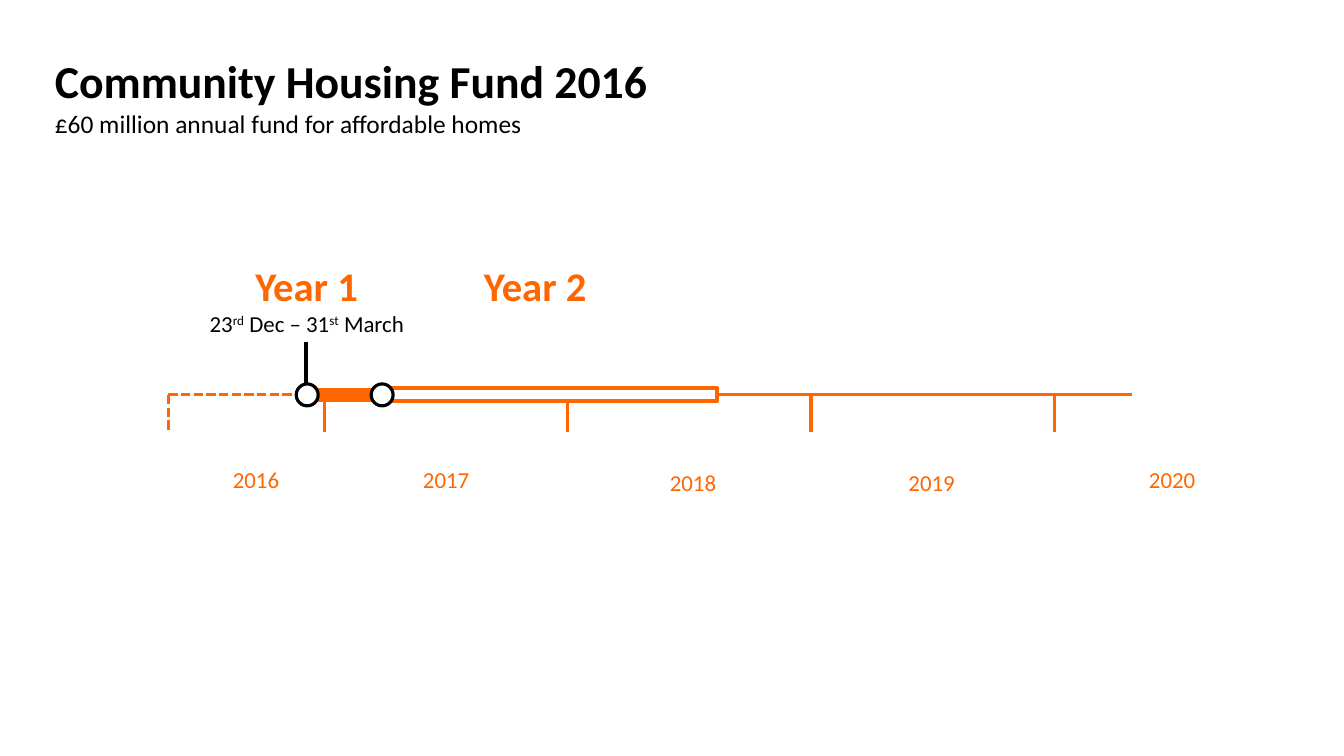
from dataclasses import dataclass

from lxml import etree
from pptx import Presentation
from pptx.dml.color import RGBColor
from pptx.enum.dml import MSO_LINE
from pptx.enum.shapes import MSO_CONNECTOR, MSO_SHAPE
from pptx.enum.text import MSO_ANCHOR, MSO_AUTO_SIZE, PP_ALIGN
from pptx.oxml.ns import qn
from pptx.slide import Slide
from pptx.text.text import TextFrame
from pptx.util import Inches, Pt

LEFT, CENTER = PP_ALIGN.LEFT, PP_ALIGN.CENTER
TOP = MSO_ANCHOR.TOP
FIXED_SIZE = MSO_AUTO_SIZE.NONE
DASHED = MSO_LINE.SQUARE_DOT
STRAIGHT = MSO_CONNECTOR.STRAIGHT
RECTANGLE, OVAL = MSO_SHAPE.RECTANGLE, MSO_SHAPE.OVAL
TITLE_ONLY = 5


@dataclass(frozen=True)
class Theme:
    font: str = "Calibri"
    orange: str = "FF6600"
    black: str = "000000"
    white: str = "FFFFFF"
    title_size: int = 36
    year_size: int = 32
    subtitle_size: int = 20
    label_size: int = 18


THEME = Theme()


@dataclass(frozen=True)
class Rule:
    x1: float
    y1: float
    x2: float
    y2: float
    color: str = THEME.orange
    weight: float = 2.5
    dashed: bool = False


@dataclass(frozen=True)
class Mark:
    kind: MSO_SHAPE
    left: float
    top: float
    width: float
    height: float
    fill: str
    line: str
    weight: float


@dataclass(frozen=True)
class CalendarYear:
    text: str
    left: float
    top: float


@dataclass(frozen=True)
class FundYear:
    name: str
    left: float
    height: float
    dates: str = ""


# Timeline geometry
AXIS_Y = 4.32
TICK_END = 4.73
FIRST_TICK, TICK_STEP, TICK_COUNT = 3.55, 2.66, 4
START_X = 1.84
MARKER_SIZE = 0.24

AXIS_RULES = [
    Rule(3.47, AXIS_Y, 12.38, AXIS_Y),
    *(Rule(FIRST_TICK + TICK_STEP * i, AXIS_Y, FIRST_TICK + TICK_STEP * i, TICK_END)
      for i in range(TICK_COUNT)),
    Rule(START_X, AXIS_Y, START_X, TICK_END, dashed=True),
    Rule(START_X, AXIS_Y, 3.24, AXIS_Y, dashed=True),
]
DATE_POINTER = Rule(3.35, 4.2, 3.35, 3.74, color=THEME.black, weight=3)

MARKS = [
    Mark(RECTANGLE, 4.2, 4.24, 3.64, 0.15, THEME.white, THEME.orange, 3),
    Mark(RECTANGLE, 3.38, 4.25, 0.8, 0.14, THEME.orange, THEME.orange, 1),
    *(Mark(OVAL, left, 4.2, MARKER_SIZE, MARKER_SIZE, THEME.white, THEME.black, 2.5)
      for left in (3.24, 4.06)),
]

CALENDAR_YEARS = [
    CalendarYear("2016", 2.38, 5.05),
    CalendarYear("2017", 4.46, 5.05),
    CalendarYear("2018", 7.16, 5.08),
    CalendarYear("2019", 9.77, 5.08),
    CalendarYear("2020", 12.4, 5.05),
]

# Text between carets is superscript
FUND_YEARS = [
    FundYear("Year 1", 1.68, 1.25, "23^rd^ Dec – 31^st^ March"),
    FundYear("Year 2", 4.18, 0.64),
]


def write(frame: TextFrame, text: str, *, size: int, color: str = THEME.black,
          bold: bool = False, align: PP_ALIGN = CENTER) -> None:
    """Fill the empty first paragraph, or append a new one."""
    para = frame.paragraphs[-1]
    if para.runs:
        para = frame.add_paragraph()
    para.alignment = align
    for index, part in enumerate(text.split("^")):
        span = para.add_run()
        span.text = part
        span.font.name = THEME.font
        span.font.size = Pt(size)
        span.font.bold = bold
        span.font.color.rgb = RGBColor.from_string(color)
        if index % 2:
            span.font._element.set("baseline", "30000")


def add_box(page: Slide, left: float, top: float, width: float, height: float) -> TextFrame:
    box = page.shapes.add_textbox(Inches(left), Inches(top), Inches(width), Inches(height))
    box.text_frame.word_wrap = True
    return box.text_frame


def draw_rule(page: Slide, rule: Rule) -> None:
    connector = page.shapes.add_connector(
        STRAIGHT, Inches(rule.x1), Inches(rule.y1), Inches(rule.x2), Inches(rule.y2))
    connector.line.color.rgb = RGBColor.from_string(rule.color)
    connector.line.width = Pt(rule.weight)
    if rule.dashed:
        connector.line.dash_style = DASHED
    etree.SubElement(connector._element.spPr, qn("a:effectLst"))


def draw_mark(page: Slide, mark: Mark) -> None:
    shape = page.shapes.add_shape(
        mark.kind, Inches(mark.left), Inches(mark.top), Inches(mark.width), Inches(mark.height))
    shape.shadow.inherit = False
    shape.fill.solid()
    shape.fill.fore_color.rgb = RGBColor.from_string(mark.fill)
    shape.line.color.rgb = RGBColor.from_string(mark.line)
    shape.line.width = Pt(mark.weight)


def draw_title(page: Slide) -> None:
    title = page.shapes.title
    title.left, title.top = Inches(0.5), Inches(0.53)
    title.width, title.height = Inches(7.77), Inches(1.04)
    frame = title.text_frame
    frame.auto_size = FIXED_SIZE
    frame.vertical_anchor = TOP
    write(frame, "Community Housing Fund 2016", size=THEME.title_size, bold=True, align=LEFT)
    write(frame, "£60 million annual fund for affordable homes",
          size=THEME.subtitle_size, align=LEFT)


def main() -> None:
    deck = Presentation()
    deck.slide_width, deck.slide_height = Inches(14.7), Inches(8.27)
    page = deck.slides.add_slide(deck.slide_layouts[TITLE_ONLY])
    draw_title(page)

    # Axis, fund periods and date pointer
    for rule in AXIS_RULES:
        draw_rule(page, rule)
    for mark in MARKS:
        draw_mark(page, mark)
    draw_rule(page, DATE_POINTER)

    # Labels below and above the axis
    for year in CALENDAR_YEARS:
        frame = add_box(page, year.left, year.top, 0.84, 0.4)
        write(frame, year.text, size=THEME.label_size, color=THEME.orange)
    for period in FUND_YEARS:
        frame = add_box(page, period.left, 2.8, 3.35, period.height)
        write(frame, period.name, size=THEME.year_size, color=THEME.orange, bold=True)
        if period.dates:
            write(frame, period.dates, size=THEME.label_size)

    deck.save("out.pptx")


if __name__ == "__main__":
    main()
